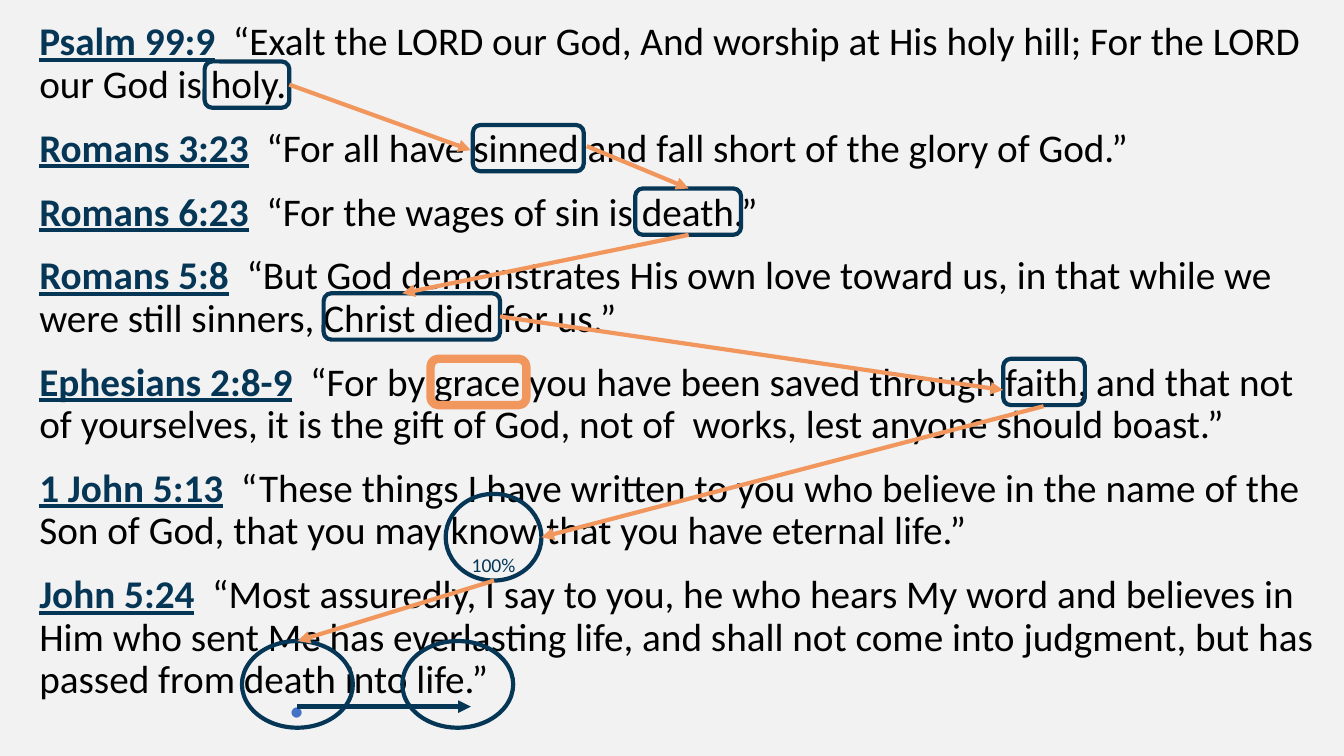
from lxml.etree import SubElement
from pptx import Presentation
from pptx.dml.color import RGBColor
from pptx.enum.shapes import MSO_CONNECTOR as Conn, MSO_SHAPE as Shape
from pptx.enum.text import MSO_ANCHOR as Anchor, PP_ALIGN as Align
from pptx.oxml.ns import qn
from pptx.util import Pt

PX = 9144
THEME = {
    "font": "Calibri", "bg": "F2F2F2", "navy": "063656", "orange": "F1975D",
    "black": "000000", "blue": "4472C4",
    "verse": 28, "label": 14, "dot": 60, "line": 3, "thick": 6,
}
VERSES = [
    ("Psalm 99:9", "“Exalt the LORD our God, And worship at His holy hill; For the LORD our God is holy.”"[:-1]),
    ("Romans 3:23", "“For all have sinned and fall short of the glory of God.”"),
    ("Romans 6:23", "“For the wages of sin is death.”"),
    ("Romans 5:8", "“But God demonstrates His own love toward us, in that while we were still sinners, Christ died for us.”"),
    ("Ephesians 2:8-9", "“For by grace you have been saved through faith, and that not of yourselves, it is the gift of God, not of  works, lest anyone should boast.”"),
    ("1 John 5:13", "“These things I have written to you who believe in the name of the Son of God, that you may know that you have eternal life.”"),
    ("John 5:24", "“Most assuredly, I say to you, he who hears My word and believes in Him who sent Me has everlasting life, and shall not come into judgment, but has passed from death into life.”"),
]
BOX_H = 46
BOXES = [
    (203, 61, 84, "navy", "line"),
    (469, 124, 110, "navy", "line"),
    (630, 187, 105, "navy", "line"),
    (321, 291, 175, "navy", "line"),
    (427, 356, 95, "orange", "thick"),
    (995, 356, 81, "navy", "line"),
]
OVAL_H = 86
OVALS = [
    (442, 490, 95, "100%", "label", "navy", 55),
    (240, 636, 110, ".", "dot", "blue", 0),
    (399, 636, 110, "", "label", "navy", 0),
]
ARROWS = [
    (295, 701, 467, 701, "navy"),
    (287, 84, 467, 149, "orange"),
    (582, 145, 683, 187, "orange"),
    (683, 233, 399, 291, "orange"),
    (496, 314, 995, 387, "orange"),
    (1035, 403, 537, 533, "orange"),
    (490, 576, 295, 636, "orange"),
]


def color(name):
    return RGBColor.from_string(THEME[name])


def add_text(p, text, size="verse", fill="black", bold=False, underline=False):
    r = p.add_run()
    r.text = text
    f = r.font
    f.name, f.size = THEME["font"], Pt(THEME[size])
    f.bold, f.underline = bold, underline
    f.color.rgb = color(fill)


def add_verses(s):
    tf = s.shapes.add_textbox(22 * PX, 17 * PX, 1300 * PX, 717 * PX).text_frame
    tf.word_wrap = True
    tf.margin_left = 17 * PX
    for i, (ref, verse) in enumerate(VERSES):
        p = tf.add_paragraph() if i else tf.paragraphs[0]
        p.line_spacing = 0.9
        p.space_before = Pt(15.4 if i else 0)
        add_text(p, ref, fill="navy", bold=True, underline=True)
        add_text(p, "  " + verse)


def add_outline(s, kind, x, y, w, h, stroke, weight):
    sp = s.shapes.add_shape(kind, x * PX, y * PX, w * PX, h * PX)
    sp.shadow.inherit = False
    sp.fill.background()
    sp.line.color.rgb = color(stroke)
    sp.line.width = Pt(THEME[weight])
    return sp


def add_oval(s, x, y, w, text, size, fill, top):
    sp = add_outline(s, Shape.OVAL, x, y, w, OVAL_H, "navy", "line")
    if text:
        tf = sp.text_frame
        tf.vertical_anchor = Anchor.MIDDLE
        tf.margin_left = tf.margin_right = tf.margin_bottom = 0
        tf.margin_top = top * PX
        p = tf.paragraphs[0]
        p.alignment = Align.CENTER
        add_text(p, text, size=size, fill=fill)


def add_arrow(s, x1, y1, x2, y2, stroke):
    c = s.shapes.add_connector(Conn.STRAIGHT, x1 * PX, y1 * PX, x2 * PX, y2 * PX)
    c.line.color.rgb = color(stroke)
    c.line.width = Pt(THEME["line"])
    SubElement(c.line._get_or_add_ln(), qn("a:tailEnd"), type="triangle")
    SubElement(c._element.spPr, qn("a:effectLst"))


def main():
    prs = Presentation()
    prs.slide_width, prs.slide_height = 1333 * PX, 750 * PX
    s = prs.slides.add_slide(prs.slide_layouts[6])
    s.background.fill.solid()
    s.background.fill.fore_color.rgb = color("bg")
    add_verses(s)
    for x, y, w, stroke, weight in BOXES:
        add_outline(s, Shape.ROUNDED_RECTANGLE, x, y, w, BOX_H, stroke, weight)
    for oval in OVALS:
        add_oval(s, *oval)
    for arrow in ARROWS:
        add_arrow(s, *arrow)
    prs.save("out.pptx")


if __name__ == "__main__":
    main()
